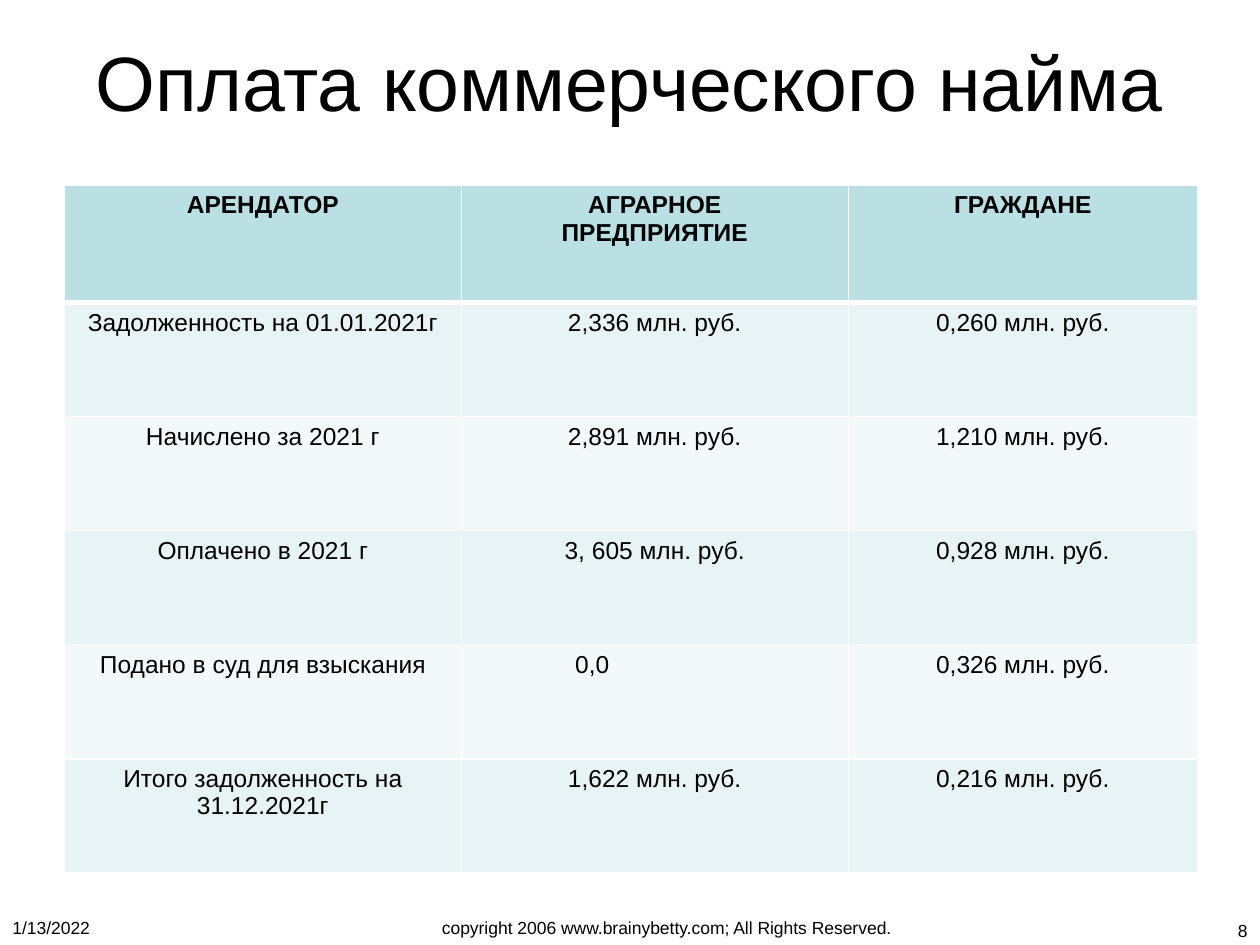
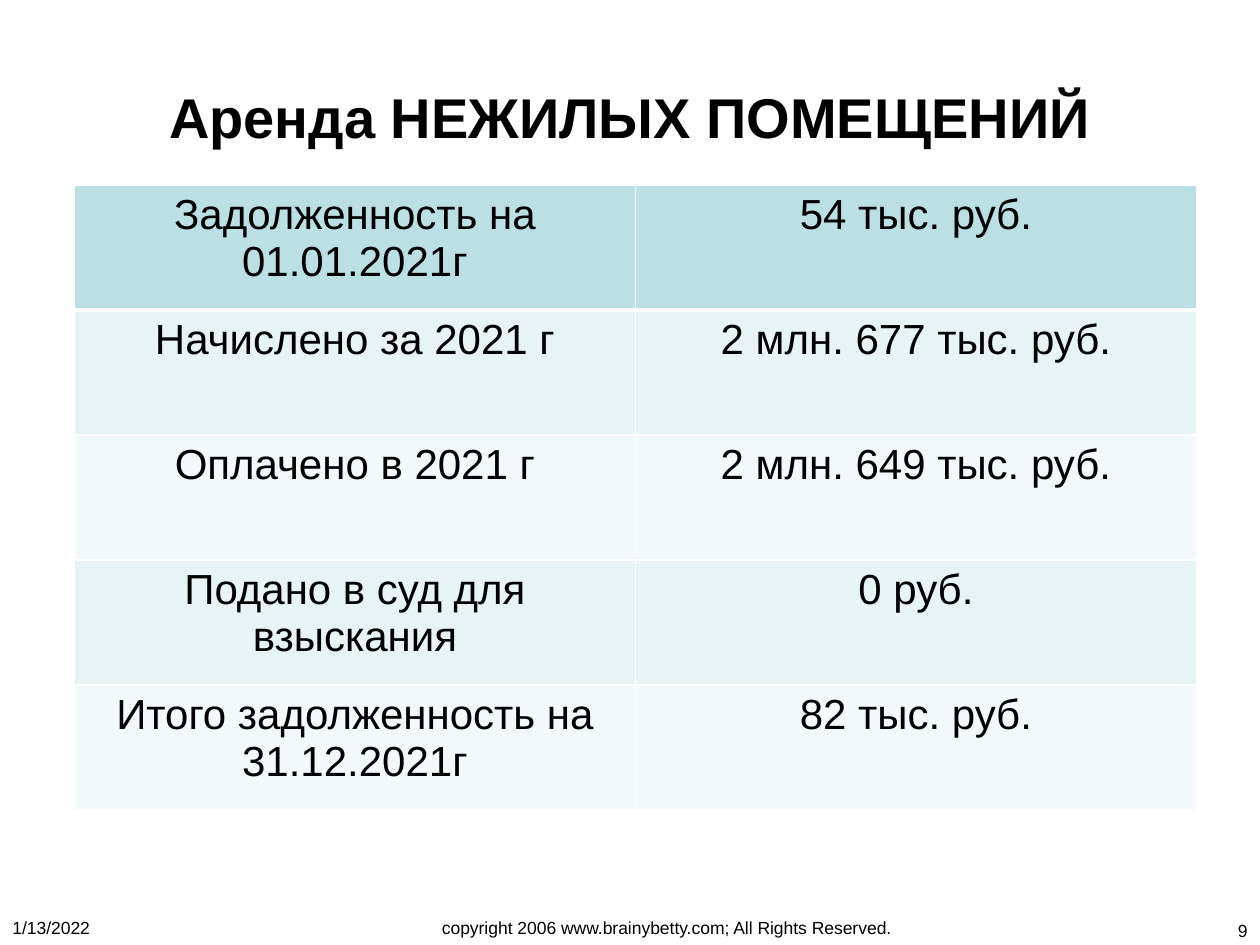
from lxml import etree
from pptx import Presentation
from pptx.dml.color import RGBColor
from pptx.enum import text
from pptx.oxml import ns
from pptx.util import Cm, Pt

BLACK, WHITE = "000000", "FFFFFF"
HEADER, BANDS = "BBE0E3", ("E7F3F4", "F3F9FA")
LEFT, CENTER, RIGHT = text.PP_ALIGN.LEFT, text.PP_ALIGN.CENTER, text.PP_ALIGN.RIGHT
DATE = "1/13/2022"
COPYRIGHT = "copyright 2006 www.brainybetty.com; All Rights Reserved."
TABLE_TOP = 3.73
RENT_ROWS = [
    ("АРЕНДАТОР", "АГРАРНОЕ\nПРЕДПРИЯТИЕ", "ГРАЖДАНЕ"),
    ("Задолженность на 01.01.2021г", "2,336 млн. руб.", "0,260 млн. руб."),
    ("Начислено за 2021 г", "2,891 млн. руб.", "1,210 млн. руб."),
    ("Оплачено в 2021 г", "3, 605 млн. руб.", "0,928 млн. руб."),
    ("Подано в суд для взыскания", "0,0", "0,326 млн. руб."),
    ("Итого задолженность на 31.12.2021г", "1,622 млн. руб.", "0,216 млн. руб."),
]
PREMISES_ROWS = [
    ("Задолженность на 01.01.2021г", "54 тыс. руб."),
    ("Начислено за 2021 г", "2 млн. 677 тыс. руб."),
    ("Оплачено в 2021 г", "2 млн. 649 тыс. руб."),
    ("Подано в суд для взыскания", "0 руб."),
    ("Итого задолженность на 31.12.2021г", "82 тыс. руб."),
]


def rgb(value):
    return RGBColor.from_string(value)


def write(tf, content, size, align=CENTER, bold=False):
    tf.word_wrap = True
    tf.text = content
    for p in tf.paragraphs:
        p.alignment = align
        font = {"name": "Arial", "size": Pt(size), "bold": bold}
        for r in p.runs:
            for key, value in font.items():
                setattr(r.font, key, value)
            r.font.color.rgb = rgb(BLACK)


def place(sp, left, top, width, height):
    box = {"left": left, "top": top, "width": width, "height": height}
    for key, value in box.items():
        setattr(sp, key, Cm(value))


def add_title(s, content, height, size, bold=False):
    sp = s.shapes.title
    place(sp, 1.27, 0.76, 22.86, height)
    write(sp.text_frame, content, size, bold=bold)
    sp.text_frame.auto_size = text.MSO_AUTO_SIZE.NONE
    sp.text_frame.vertical_anchor = text.MSO_ANCHOR.MIDDLE


def add_label(s, content, left, top, width, height, align):
    sp = s.shapes.add_textbox(Cm(left), Cm(top), Cm(width), Cm(height))
    write(sp.text_frame, content, 10, align)


def add_footer(s, number):
    add_label(s, DATE, 0, 18.36, 5.92, 0.69, LEFT)
    add_label(s, COPYRIGHT, 6.55, 18.36, 13.77, 0.69, CENTER)
    add_label(s, str(number), 22.02, 18.42, 3.38, 0.63, RIGHT)


def set_borders(cell, widths):
    tcPr = cell._tc.get_or_add_tcPr()
    for i, (side, width) in enumerate(widths.items()):
        ln = etree.Element(ns.qn(f"a:ln{side}"), w=str(Pt(width)))
        fill = etree.SubElement(ln, ns.qn("a:solidFill"))
        etree.SubElement(fill, ns.qn("a:srgbClr"), val=WHITE)
        tcPr.insert(i, ln)


def add_table(s, rows, left, widths, heights, size, bold_header=False):
    frame = s.shapes.add_table(len(rows), len(widths), Cm(left), Cm(TABLE_TOP),
                               Cm(sum(widths)), Cm(sum(heights)))
    table = frame.table
    table.first_row = table.horz_banding = False
    for column, width in zip(table.columns, widths):
        column.width = Cm(width)
    for i, (row, values) in enumerate(zip(table.rows, rows)):
        row.height = Cm(heights[i])
        borders = {"L": 1, "R": 1, "T": 3 if i == 1 else 1, "B": 3 if i == 0 else 1}
        for cell, value in zip(row.cells, values):
            write(cell.text_frame, value, size, bold=bold_header and i == 0)
            cell.fill.solid()
            cell.fill.fore_color.rgb = rgb(BANDS[(i - 1) % 2] if i else HEADER)
            set_borders(cell, borders)
    return table


def indent_left(cell, indent):
    p = cell.text_frame.paragraphs[0]
    p.alignment = LEFT
    p._p.get_or_add_pPr().set("marL", str(Cm(indent)))


def add_slide(prs, number):
    s = prs.slides.add_slide(prs.slide_layouts[5])
    add_footer(s, number)
    return s


def main():
    prs = Presentation()
    prs.slide_width, prs.slide_height = Cm(25.4), Cm(19.05)

    s = add_slide(prs, 8)
    add_title(s, "Оплата коммерческого найма", 1.75, 44)
    table = add_table(s, RENT_ROWS, 1.3, [8, 7.8, 7.04], [2.37] + [2.3] * 5, 14, True)
    indent_left(table.cell(4, 1), 2.04)

    s = add_slide(prs, 9)
    add_title(s, "Аренда НЕЖИЛЫХ ПОМЕЩЕНИЙ", 3.18, 32, True)
    add_table(s, PREMISES_ROWS, 1.5, [11.31] * 2, [2.52] * 5, 24)

    prs.save("out.pptx")


if __name__ == "__main__":
    main()
